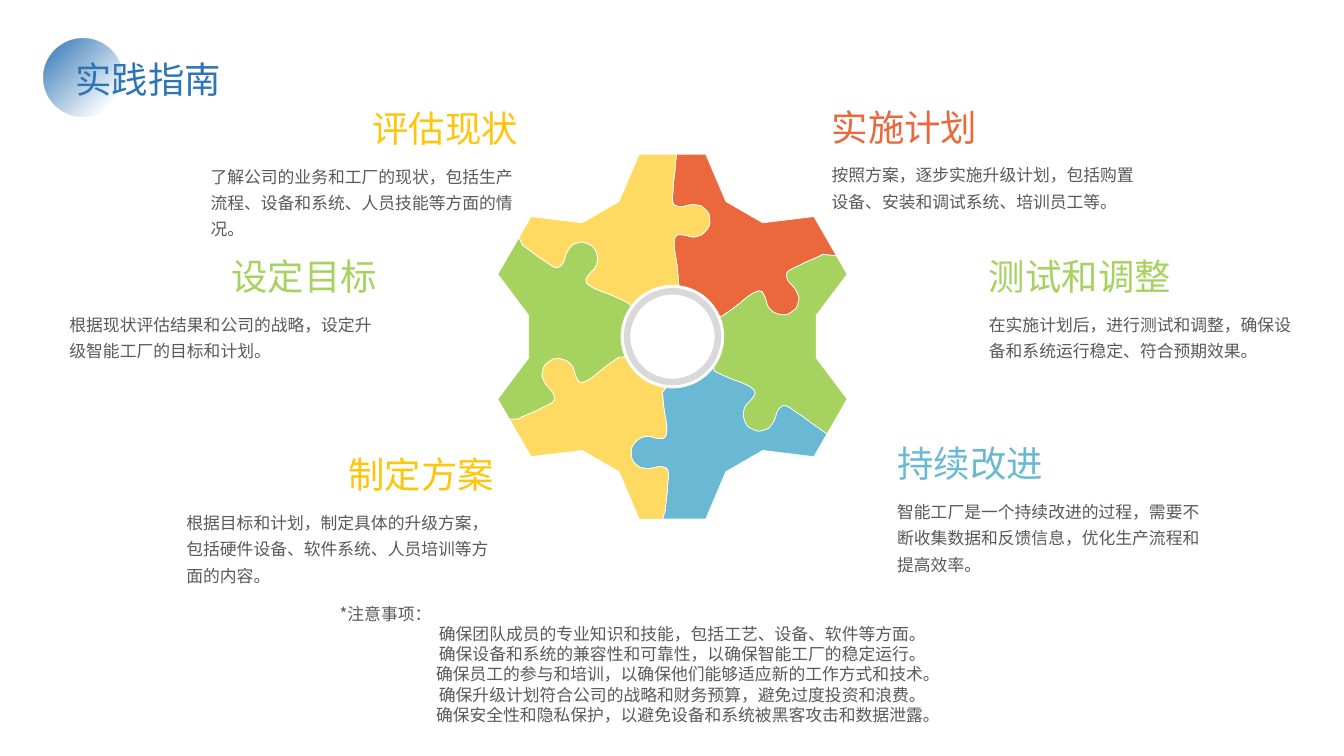
from math import cos, sin, radians

from lxml import etree
from pptx import Presentation
from pptx.dml.color import RGBColor as RGB
from pptx.enum.shapes import MSO_SHAPE as Shape
from pptx.enum.text import MSO_ANCHOR as Anchor, PP_ALIGN as Align
from pptx.oxml import parse_xml
from pptx.oxml.ns import nsdecls, qn
from pptx.util import Inches, Pt

FONT = "Noto Sans CJK SC"
HUES = {
    "title": "2E75B6", "body": "595959", "gold": "FFC50A", "green": "A6D25F",
    "coral": "EB673C", "sky": "6AB9D4", "sun": "FFDA62", "ring": "D9D9D9",
    "white": "FFFFFF",
}
PIECES = ["coral", "green", "sky", "sun", "green", "sun"]
SLIPS = [0.04, 0.12, 0.07, 0.1, 0.1, 0.09]
SEAM_START = (0.05, -1.72)
SEAM = [
    (0.05, -1.7, 0.04, -1.59, 0.03, -1.53), (0.03, -1.46, 0.02, -1.4, 0.02, -1.38),
    (0.02, -1.35, 0.02, -1.31, 0.05, -1.3), (0.08, -1.29, 0.11, -1.28, 0.16, -1.3),
    (0.22, -1.32, 0.28, -1.3, 0.3, -1.3), (0.31, -1.29, 0.36, -1.26, 0.38, -1.22),
    (0.39, -1.18, 0.39, -1.14, 0.39, -1.12), (0.39, -1.11, 0.37, -1.07, 0.36, -1.06),
    (0.35, -1.05, 0.31, -1, 0.28, -1), (0.26, -0.99, 0.21, -0.98, 0.17, -1),
    (0.12, -1.01, 0.12, -1.01, 0.11, -1.01), (0.1, -1.01, 0.08, -1.01, 0.07, -1.01),
    (0.06, -1, 0.04, -0.99, 0.04, -0.96), (0.03, -0.93, 0.04, -0.85, 0.05, -0.8),
    (0.06, -0.76, 0.07, -0.67, 0.08, -0.55),
]
STEPS = [
    (1.99, 0.84, "gold", Align.RIGHT, "评估现状",
     "了解公司的业务和工厂的现状，包括生产流程、设备和系统、人员技能等方面的情况。"),
    (0.59, 2.31, "green", Align.RIGHT, "设定目标",
     "根据现状评估结果和公司的战略，设定升级智能工厂的目标和计划。"),
    (1.75, 4.28, "gold", Align.RIGHT, "制定方案",
     "根据目标和计划，制定具体的升级方案，包括硬件设备、软件系统、人员培训等方面的内容。"),
    (8.15, 0.83, "coral", Align.LEFT, "实施计划",
     "按照方案，逐步实施升级计划，包括购置设备、安装和调试系统、培训员工等。"),
    (9.71, 2.31, "green", Align.LEFT, "测试和调整",
     "在实施计划后，进行测试和调整，确保设备和系统运行稳定、符合预期效果。"),
    (8.8, 4.17, "sky", Align.LEFT, "持续改进",
     "智能工厂是一个持续改进的过程，需要不断收集数据和反馈信息，优化生产流程和提高效率。"),
]
NOTES = [
    ("*注意事项：", 2.2, Align.LEFT),
    ("确保团队成员的专业知识和技能，包括工艺、设备、软件等方面。", 0.07, Align.CENTER),
    ("确保设备和系统的兼容性和可靠性，以确保智能工厂的稳定运行。", 0.07, Align.CENTER),
    ("确保员工的参与和培训，以确保他们能够适应新的工作方式和技术。", 0.18, Align.CENTER),
    ("确保升级计划符合公司的战略和财务预算，避免过度投资和浪费。", 0.07, Align.CENTER),
    ("确保安全性和隐私保护，以避免设备和系统被黑客攻击和数据泄露。", 0.18, Align.CENTER),
]


def add_frame(slide, box, anchor=Anchor.TOP):
    """Add a wrapping text box and return its text frame."""
    frame = slide.shapes.add_textbox(*map(Inches, box)).text_frame
    frame.word_wrap = True
    frame.vertical_anchor = anchor
    return frame


def add_run(para, text, size, hue):
    """Add one run in the slide font."""
    run = para.add_run()
    run.text = text
    run.font.size = Pt(size)
    run.font.color.rgb = RGB.from_string(HUES[hue])
    run.font.name = FONT
    etree.SubElement(run.font._element, qn("a:ea")).set("typeface", FONT)


def add_title(slide, left, top):
    """Draw the fading disc and the slide title over it."""
    disc = slide.shapes.add_shape(
        Shape.OVAL, *map(Inches, (left, top, 0.78, 0.78)))
    disc.shadow.inherit = False
    disc.line.fill.background()
    disc.fill.background()
    blue = HUES["title"]
    grad = parse_xml(
        f'<a:gradFill {nsdecls("a")} rotWithShape="1"><a:gsLst>'
        f'<a:gs pos="15000"><a:srgbClr val="{blue}"><a:alpha val="0"/></a:srgbClr></a:gs>'
        f'<a:gs pos="100000"><a:srgbClr val="{blue}"/></a:gs></a:gsLst>'
        '<a:path path="circle"><a:fillToRect l="100000" t="100000"/></a:path></a:gradFill>')
    props = disc._element.spPr
    props.replace(props.find(qn("a:noFill")), grad)
    frame = add_frame(slide, (left + 0.22, top + 0.14, 4.09, 0.54))
    add_run(frame.paragraphs[0], "实践指南", 26, "title")


def turn(x, y, angle):
    """Turn a point clockwise about the origin."""
    c, s = cos(radians(angle)), sin(radians(angle))
    return x * c - y * s, x * s + y * c


def trace_seam(turns):
    """List the points of a seam from the rim to the hub."""
    spots = [SEAM_START]
    for ax, ay, bx, by, ex, ey in SEAM:
        sx, sy = spots[-1]
        for t in (0.25, 0.5, 0.75, 1):
            u = 1 - t
            w = u ** 3, 3 * u * u * t, 3 * u * t * t, t ** 3
            spots.append((w[0] * sx + w[1] * ax + w[2] * bx + w[3] * ex,
                          w[0] * sy + w[1] * ay + w[2] * by + w[3] * ey))
    turned = [turn(x, y, 60 * turns) for x, y in spots]
    rim = turn(SLIPS[turns], -1.81, 60 * turns)
    return [rim] + [(x - 0.02, y) for x, y in turned]


def add_gear(slide, mid_x, mid_y):
    """Draw six puzzle pieces of a gear and the hub ring."""
    for i, hue in enumerate(PIECES):
        here, there = 60 * i, 60 * (i + 1)
        teeth = [turn(0.33, -1.81, here), turn(0.53, -1.34, here),
                 turn(-0.53, -1.34, there), turn(-0.33, -1.81, there)]
        arc = [turn(0, -0.51, there + 7 - 5 * n) for n in range(13)]
        spots = (trace_seam(i)[::-1] + teeth
                 + trace_seam((i + 1) % 6) + arc)
        spots = [(Inches(mid_x + x), Inches(mid_y + y)) for x, y in spots]
        pen = slide.shapes.build_freeform(*spots[0])
        pen.add_line_segments(spots[1:], close=True)
        piece = pen.convert_to_shape()
        piece.shadow.inherit = False
        piece.fill.solid()
        piece.fill.fore_color.rgb = RGB.from_string(HUES[hue])
        piece.line.color.rgb = RGB.from_string(HUES["white"])
        piece.line.width = Pt(0.5)
    ring = slide.shapes.add_shape(
        Shape.OVAL, *map(Inches, (mid_x - 0.45, mid_y - 0.45, 0.9, 0.9)))
    ring.shadow.inherit = False
    ring.fill.background()
    ring.line.color.rgb = RGB.from_string(HUES["ring"])
    ring.line.width = Pt(4.63)


def add_step(slide, left, top, hue, align, name, text):
    """Place a step heading with its body below."""
    head = add_frame(slide, (left, top, 3.25, 0.69), Anchor.BOTTOM)
    body = add_frame(slide, (left, top + 0.7, 3.25, 0.99))
    head.paragraphs[0].alignment = align
    for frame, words, size, tint in ((head, name, 26, hue), (body, text, 12, "body")):
        para = frame.paragraphs[0]
        para.line_spacing = 1.3
        para.space_before = Pt(12)
        add_run(para, words, size, tint)


def add_notes(slide, box):
    """List the points to watch."""
    frame = add_frame(slide, box)
    for i, (text, indent, align) in enumerate(NOTES):
        para = frame.add_paragraph() if i else frame.paragraphs[0]
        para.alignment = align
        para._p.get_or_add_pPr().set("marL", str(Inches(indent)))
        add_run(para, text, 12, "body")


def main():
    """Build and save the slide."""
    deck = Presentation()
    deck.slide_width, deck.slide_height = Inches(13.33), Inches(7.5)
    slide = deck.slides.add_slide(deck.slide_layouts[6])
    add_title(slide, 0.43, 0.38)
    add_gear(slide, 6.67, 3.34)
    for step in STEPS:
        add_step(slide, *step)
    add_notes(slide, (1.07, 5.94, 11.33, 1.51))
    deck.save("out.pptx")


if __name__ == "__main__":
    main()
